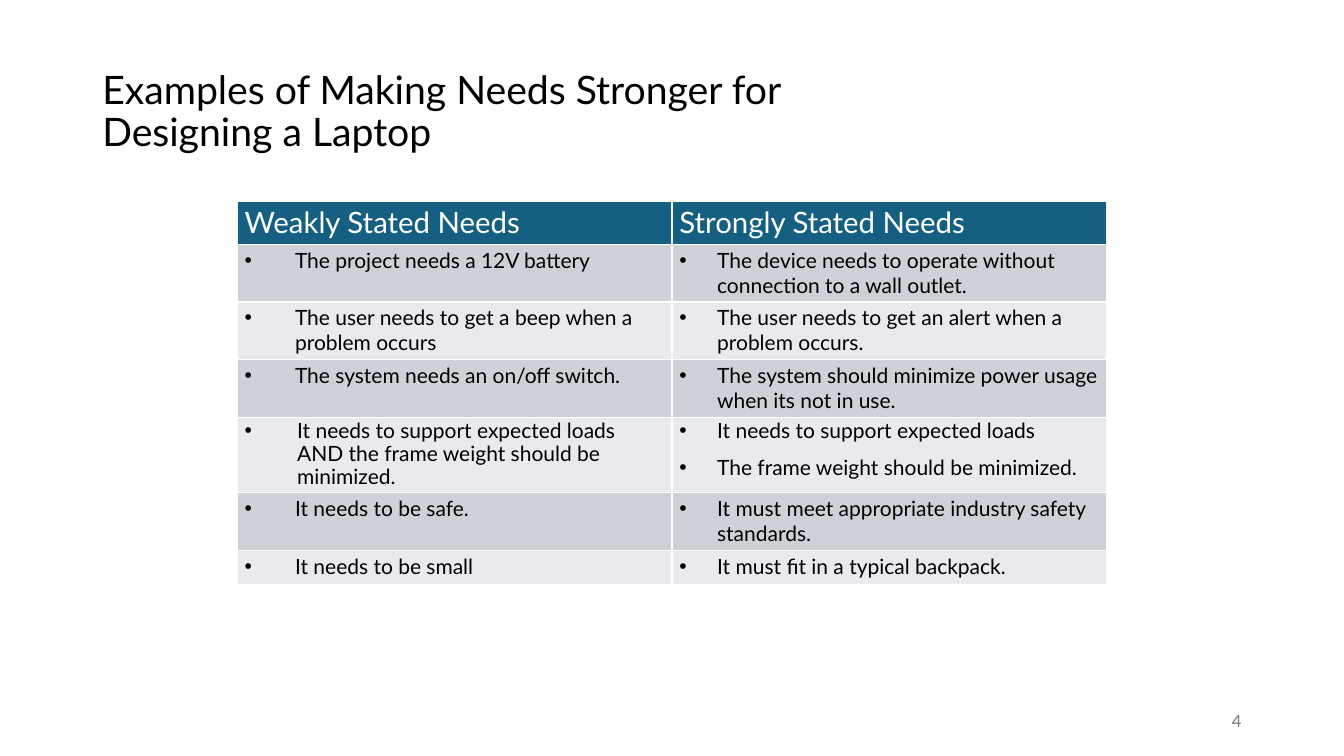
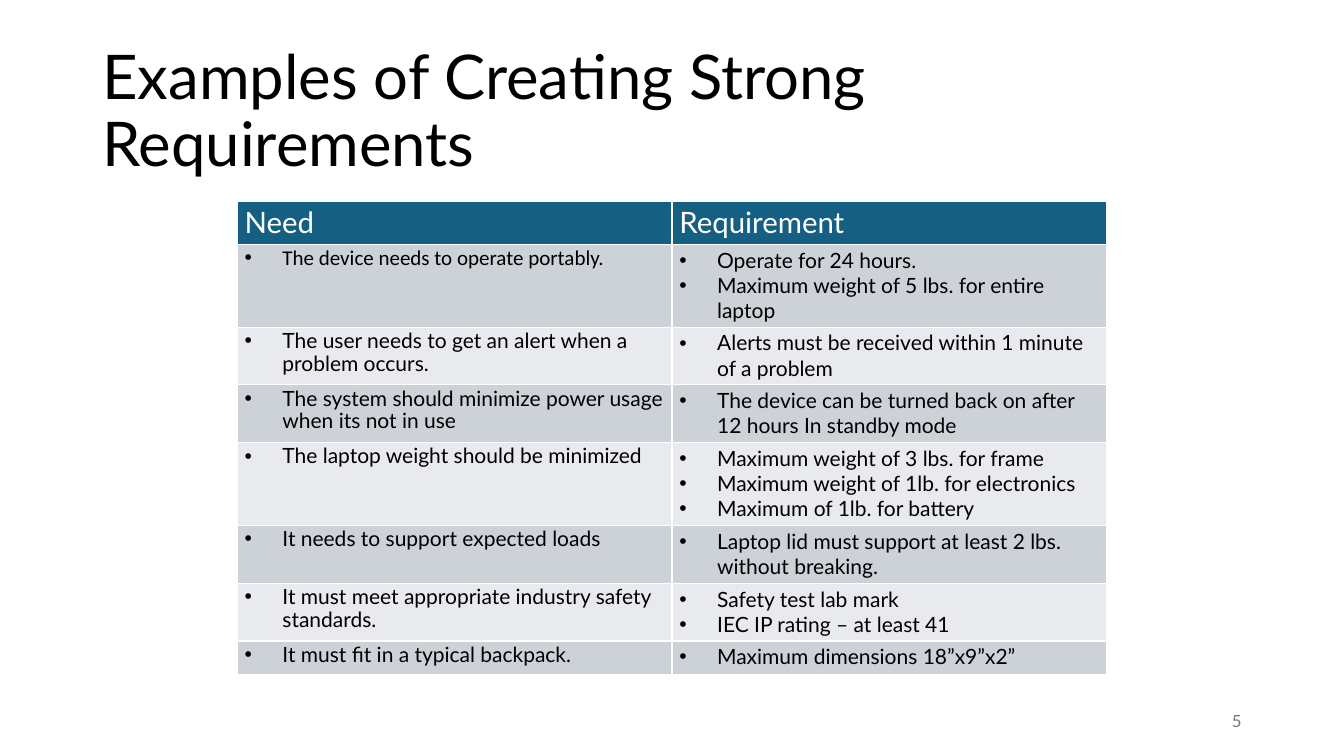
from dataclasses import dataclass

from lxml import etree
from pptx import Presentation
from pptx import util as u
from pptx.dml.color import RGBColor
from pptx.enum import text
from pptx.oxml.ns import qn

PX = 9525  # EMU per px, 96 px to the inch
FONT = "Lato"
INK = {
    "black": "000000",
    "white": "FFFFFF",
    "head": "156082",
    "odd": "CCD2D8",
    "even": "E8EAED",
    "page": "797979",
}


@dataclass
class Side:
    """Bullet style of one table column."""
    indent: int
    tight: bool = False


@dataclass
class Row:
    height: int
    left: str
    right: tuple[str, ...]
    tight: bool = False
    face: str = FONT  # font of the left cell
    extra: int = 0  # added indent of the left cell


@dataclass
class Page:
    title: str
    size: int
    number: int
    heads: tuple[str, str]
    top: int  # header height
    sides: tuple[Side, Side]
    rows: list[Row]


def px(n: int) -> u.Emu:
    return u.Emu(n * PX)


def rgb(name: str) -> RGBColor:
    return RGBColor.from_string(INK[name])


def style(para, size: int, color: str, face: str = FONT) -> None:
    para.font.size = u.Pt(size)
    para.font.name = face
    para.font.color.rgb = rgb(color)


def label(slide, box: tuple[int, int, int, int], words: str, size: int, color: str):
    frame = slide.shapes.add_textbox(*map(px, box)).text_frame
    frame.word_wrap = True
    frame.vertical_anchor = text.MSO_ANCHOR.MIDDLE
    para = frame.paragraphs[0]
    para.text = words
    style(para, size, color)
    return para


def bullet(para, indent: int) -> None:
    props = para._p.get_or_add_pPr()
    props.set("marL", str(px(indent)))
    props.set("indent", str(px(-indent)))
    etree.SubElement(props, qn("a:buFont")).set("typeface", "Arial")
    etree.SubElement(props, qn("a:buChar")).set("char", "•")


def dress(cell, fill: str) -> None:
    """Margins, white borders and fill of a cell."""
    cell.margin_left = cell.margin_right = px(7)
    cell.margin_top, cell.margin_bottom = px(3), px(4)
    props = cell._tc.get_or_add_tcPr()
    for edge in ("lnL", "lnR", "lnT", "lnB"):
        line = etree.SubElement(props, qn(f"a:{edge}"), w=str(u.Pt(1)))
        solid = etree.SubElement(line, qn("a:solidFill"))
        etree.SubElement(solid, qn("a:srgbClr")).set("val", INK["white"])
    cell.fill.solid()
    cell.fill.fore_color.rgb = rgb(fill)


def items(cell, lines: tuple[str, ...], indent: int, tight: bool, face: str) -> None:
    frame = cell.text_frame
    for i, line in enumerate(lines):
        para = frame.add_paragraph() if i else frame.paragraphs[0]
        para.text = line
        bullet(para, indent)
        if tight:
            para.line_spacing = 0.9
            if i:
                para.space_before = u.Pt(10)
        style(para, 15, "black", face)


def grid(slide, page: Page) -> None:
    heights = [page.top] + [row.height for row in page.rows]
    frame = slide.shapes.add_table(
        len(heights), 2, px(226), px(192), px(828), px(sum(heights)))
    table = frame.table
    table.first_row = table.horz_banding = False
    for line, height in zip(table.rows, heights):
        line.height = px(height)

    # Header
    for col, head in enumerate(page.heads):
        cell = table.cell(0, col)
        dress(cell, "head")
        para = cell.text_frame.paragraphs[0]
        para.text = head
        style(para, 21, "white")

    # Body
    for r, row in enumerate(page.rows, 1):
        cells = ((row.left,), row.face, row.extra), (row.right, FONT, 0)
        for col, (lines, face, extra) in enumerate(cells):
            cell, side = table.cell(r, col), page.sides[col]
            dress(cell, "odd" if r % 2 else "even")
            items(cell, lines, side.indent + extra, row.tight or side.tight, face)


def draw(deck, page: Page) -> None:
    slide = deck.slides.add_slide(deck.slide_layouts[6])
    title = label(slide, (88, 38, 1104, 139), page.title, page.size, "black")
    title.line_spacing = 0.9
    grid(slide, page)
    foot = label(slide, (904, 667, 288, 38), str(page.number), 12, "page")
    foot.alignment = text.PP_ALIGN.RIGHT


PAGES = [
    Page(
        "Examples of Making Needs Stronger for\vDesigning a Laptop", 28, 4,
        ("Weakly Stated Needs", "Strongly Stated Needs"), 40,
        (Side(48), Side(36)),
        [
            Row(55, "The project needs a 12V battery",
                ("The device needs to operate without connection to a wall outlet.",)),
            Row(55, "The user needs to get a beep when a problem occurs",
                ("The user needs to get an alert when a problem occurs.",)),
            Row(55, "The system needs an on/off switch.",
                ("The system should minimize power usage when its not in use.",)),
            Row(60, "It needs to support expected loads AND the frame weight "
                "should be minimized.",
                ("It needs to support expected loads",
                 "The frame weight should be minimized."), tight=True, extra=2),
            Row(55, "It needs to be safe.",
                ("It must meet appropriate industry safety standards.",)),
            Row(32, "It needs to be small", ("It must fit in a typical backpack.",)),
        ],
    ),
    Page(
        "Examples of Creating Strong Requirements", 44, 5,
        ("Need", "Requirement"), 29,
        (Side(36, tight=True), Side(36)),
        [
            Row(55, "The device needs to operate portably.",
                ("Operate for 24 hours.",
                 "Maximum weight of 5 lbs. for entire laptop"), face="Calibri"),
            Row(55, "The user needs to get an alert when a problem occurs.",
                ("Alerts must be received within 1 minute of a problem",)),
            Row(55, "The system should minimize power usage when its not in use",
                ("The device can be turned back on after 12 hours In standby mode",)),
            Row(55, "The laptop weight should be minimized",
                ("Maximum weight of 3 lbs. for frame",
                 "Maximum weight of 1lb. for electronics",
                 "Maximum of 1lb. for battery")),
            Row(32, "It needs to support expected loads",
                ("Laptop lid must support at least 2 lbs. without breaking.",)),
            Row(55, "It must meet appropriate industry safety standards.",
                ("Safety test lab mark", "IEC IP rating – at least 41")),
            Row(32, "It must fit in a typical backpack.",
                ("Maximum dimensions 18”x9”x2”",)),
        ],
    ),
]


def main() -> None:
    deck = Presentation()
    deck.slide_width, deck.slide_height = px(1280), px(720)
    for page in PAGES:
        draw(deck, page)
    deck.save("out.pptx")


if __name__ == "__main__":
    main()
